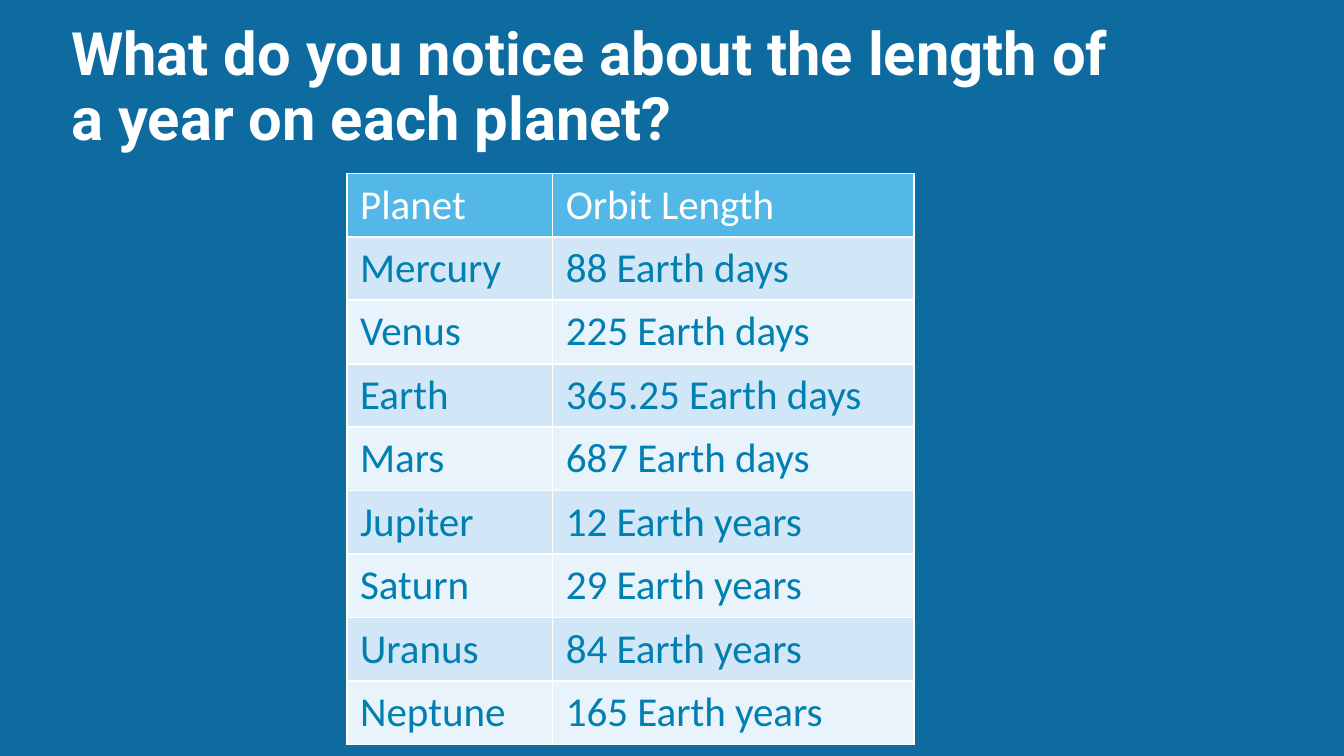
from lxml import etree
from pptx import Presentation
from pptx.dml.color import RGBColor
from pptx.enum import text
from pptx.oxml import ns
from pptx.util import Inches, Pt

HUES = {
    "back": "0D6BA0",
    "title": "FFFFFF",
    "line": "FEFFFF",
    "head": "53B7E8",
    "odd": "D1E6F6",
    "even": "E9F3FB",
    "ink": "007FB0",
}

ORBITS = [
    ("Planet", "Orbit Length"),
    ("Mercury", "88 Earth days"),
    ("Venus", "225 Earth days"),
    ("Earth", "365.25 Earth days"),
    ("Mars", "687 Earth days"),
    ("Jupiter", "12 Earth years"),
    ("Saturn", "29 Earth years"),
    ("Uranus", "84 Earth years"),
    ("Neptune", "165 Earth years"),
]


def hue(name):
    return RGBColor.from_string(HUES[name])


class Deck:
    def __init__(self, wide, high):
        self.show = Presentation()
        self.show.slide_width = Inches(wide)
        self.show.slide_height = Inches(high)
        self.slide = self.show.slides.add_slide(self.show.slide_layouts[5])
        fill = self.slide.background.fill
        fill.solid()
        fill.fore_color.rgb = hue("back")

    def font(self, para, face, size, color, bold=False):
        font = para.font
        font.name = face
        font.size = Pt(size)
        font.bold = bold
        font.color.rgb = hue(color)

    def title(self, words, left, top, wide, high):
        box = self.slide.shapes.title
        box.left, box.top = Inches(left), Inches(top)
        box.width, box.height = Inches(wide), Inches(high)
        frame = box.text_frame
        frame.text = words
        frame.word_wrap = True
        frame.auto_size = text.MSO_AUTO_SIZE.NONE
        frame.vertical_anchor = text.MSO_ANCHOR.TOP
        frame.margin_left = frame.margin_right = 0
        frame.margin_top = frame.margin_bottom = 0
        para = frame.paragraphs[0]
        para.alignment = text.PP_ALIGN.LEFT
        para.line_spacing = 0.9
        self.font(para, "Roboto", 32, "title", True)

    def border(self, cell):
        props = cell._tc.get_or_add_tcPr()
        for side in "LRTB":
            line = etree.SubElement(props, ns.qn(f"a:ln{side}"), w=str(Pt(1)))
            fill = etree.SubElement(line, ns.qn("a:solidFill"))
            etree.SubElement(fill, ns.qn("a:srgbClr"), val=HUES["line"])

    def cell(self, cell, words, fill, ink):
        cell.text = words
        self.border(cell)
        cell.fill.solid()
        cell.fill.fore_color.rgb = hue(fill)
        self.font(cell.text_frame.paragraphs[0], "Calibri", 22, ink)

    def table(self, rows, left, top, cols, high):
        grid = self.slide.shapes.add_table(
            len(rows), len(cols), Inches(left), Inches(top),
            Inches(sum(cols)), Inches(high * len(rows))).table
        for col, wide in zip(grid.columns, cols):
            col.width = Inches(wide)
        for r, row in enumerate(rows):
            grid.rows[r].height = Inches(high)
            fill = "head" if r == 0 else "odd" if r % 2 else "even"
            ink = "ink" if r else "line"
            for c, words in enumerate(row):
                self.cell(grid.cell(r, c), words, fill, ink)


def main():
    deck = Deck(10, 10 * 9 / 16)
    deck.title("What do you notice about the length of a year on each planet?",
               0.53, 0.18, 7.73, 3.71)
    deck.table(ORBITS, 2.58, 1.29, (1.53, 2.69), 0.47)
    deck.show.save("out.pptx")


if __name__ == "__main__":
    main()
